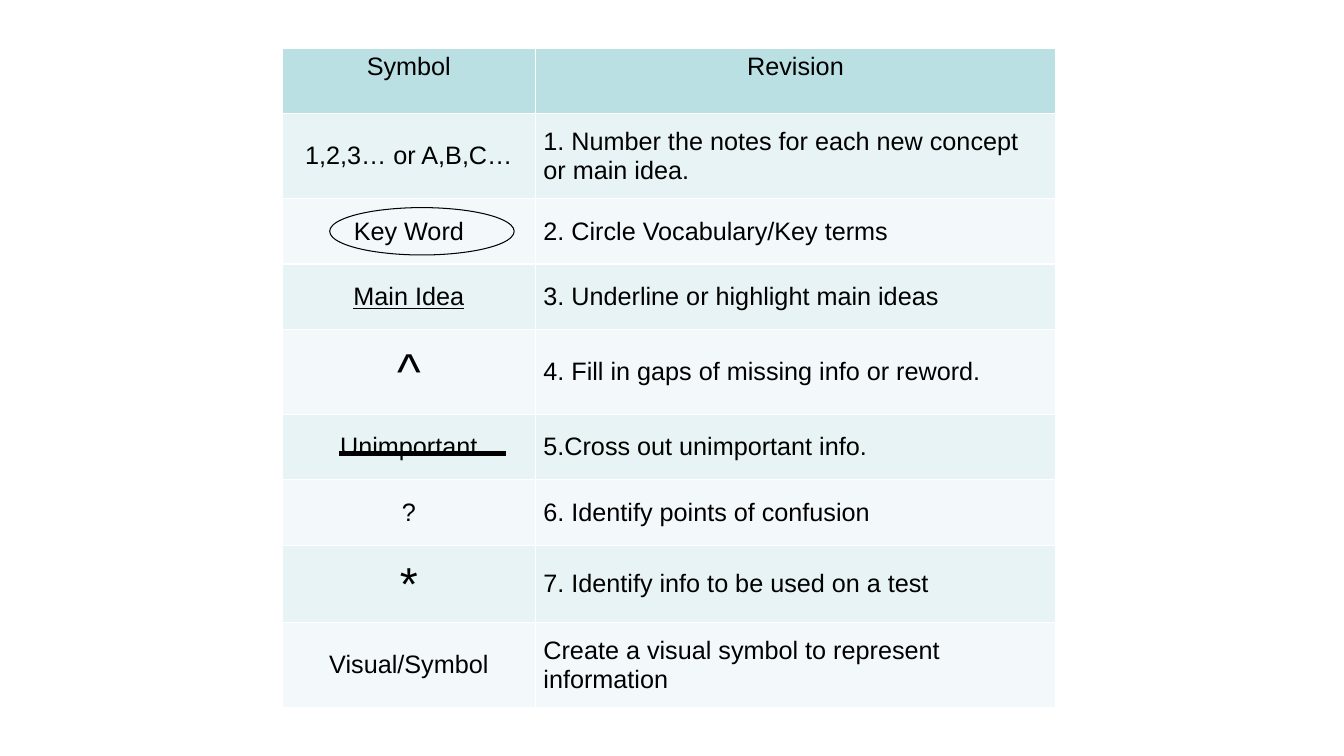
from pptx import Presentation, util as u
from pptx.dml.color import RGBColor
from pptx.enum import shapes, text
from pptx.oxml import parse_xml
from pptx.oxml.ns import nsdecls

THEME = {
    "font": "Arial", "ink": "000000", "rule": "FFFFFF",
    "head": "BBE0E3", "bands": ["F3F9FA", "E7F3F4"],
    "body": 18, "caret": 36, "star": 33,
}
LEFT, TOP = 2.8, 0.48
COLS = [2.51, 5.16]
LOW, MID, TALL = 0.65, 0.77, 0.84
ROWS = [
    (LOW, "Symbol", "Revision"),
    (TALL, "1,2,3… or A,B,C…", "1. Number the notes for each new concept or main idea."),
    (LOW, "Key Word", "2. Circle Vocabulary/Key terms"),
    (LOW, "Main Idea", "3. Underline or highlight main ideas"),
    (TALL, "^", "4. Fill in gaps of missing info or reword."),
    (LOW, "Unimportant", "5.Cross out unimportant info."),
    (LOW, "?", "6. Identify points of confusion"),
    (MID, "*", "7. Identify info to be used on a test"),
    (TALL, "Visual/Symbol", "Create a visual symbol to represent information"),
]
SIZES = {"^": THEME["caret"], "*": THEME["star"]}


def color(name):
    return RGBColor.from_string(name)


def border(cell):
    props = cell._tc.get_or_add_tcPr()
    for side in "LRTB":
        props.append(parse_xml(
            f'<a:ln{side} {nsdecls("a")} w="{u.Pt(1)}"><a:solidFill>'
            f'<a:srgbClr val="{THEME["rule"]}"/></a:solidFill></a:ln{side}>'))


deck = Presentation()
deck.slide_width, deck.slide_height = u.Inches(13.33), u.Inches(7.5)
slide = deck.slides.add_slide(deck.slide_layouts[6])

high = sum(row[0] for row in ROWS)
table = slide.shapes.add_table(
    len(ROWS), len(COLS), u.Inches(LEFT), u.Inches(TOP),
    u.Inches(sum(COLS)), u.Inches(high)).table
for col, wide in enumerate(COLS):
    table.columns[col].width = u.Inches(wide)

for row, (tall, *words) in enumerate(ROWS):
    table.rows[row].height = u.Inches(tall)
    for col, word in enumerate(words):
        cell = table.cell(row, col)
        cell.text = word
        cell.margin_left = cell.margin_right = u.Inches(0.08)
        cell.margin_top = cell.margin_bottom = u.Inches(0.04)
        cell.vertical_anchor = text.MSO_ANCHOR.MIDDLE if row else text.MSO_ANCHOR.TOP
        border(cell)
        cell.fill.solid()
        cell.fill.fore_color.rgb = color(THEME["bands"][row % 2] if row else THEME["head"])
        para = cell.text_frame.paragraphs[0]
        para.alignment = text.PP_ALIGN.LEFT if row and col else text.PP_ALIGN.CENTER
        para.font.name = THEME["font"]
        para.font.size = u.Pt(SIZES.get(word, THEME["body"]))
        para.font.bold = False
        para.font.underline = word == "Main Idea"
        para.font.color.rgb = color(THEME["ink"])

ring = slide.shapes.add_shape(
    shapes.MSO_SHAPE.OVAL, u.Inches(3.27), u.Inches(2.06), u.Inches(1.83), u.Inches(0.47))
ring.shadow.inherit = False
ring.fill.background()
ring.line.color.rgb = color(THEME["ink"])
ring.line.width = u.Pt(0.75)

strike = slide.shapes.add_connector(
    shapes.MSO_CONNECTOR.STRAIGHT, u.Inches(3.36), u.Inches(4.5), u.Inches(5.02), u.Inches(4.5))
strike.line.color.rgb = color(THEME["ink"])
strike.line.width = u.Pt(3.75)
strike._element.spPr.append(parse_xml(f'<a:effectLst {nsdecls("a")}/>'))

deck.save("out.pptx")
